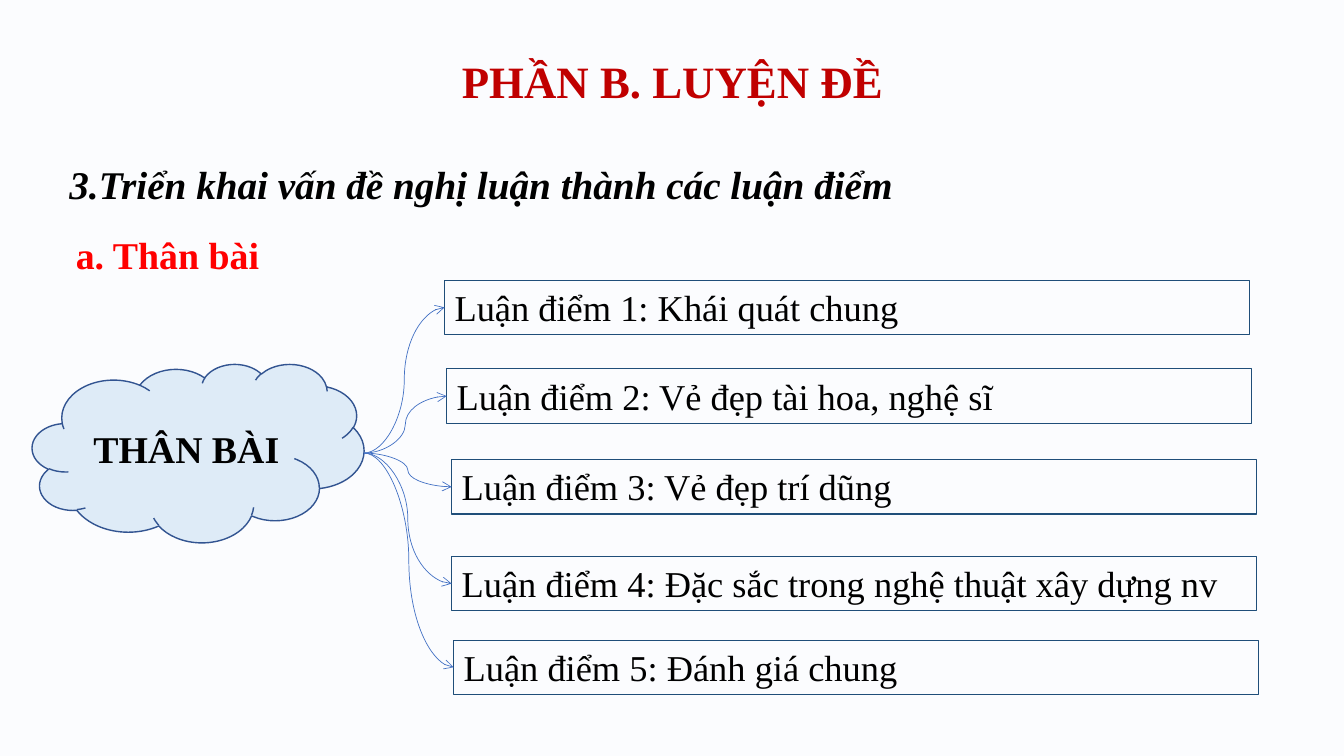
from dataclasses import dataclass

from lxml import etree
from pptx import Presentation
from pptx.dml.color import RGBColor
from pptx.enum.shapes import MSO_CONNECTOR, MSO_SHAPE
from pptx.enum.text import MSO_ANCHOR, MSO_AUTO_SIZE, PP_ALIGN
from pptx.oxml.ns import qn
from pptx.shapes.autoshape import Shape
from pptx.slide import Slide
from pptx.util import Inches, Pt

CENTER, JUSTIFY = PP_ALIGN.CENTER, PP_ALIGN.JUSTIFY
TOP, MIDDLE = MSO_ANCHOR.TOP, MSO_ANCHOR.MIDDLE
FIT_SHAPE = MSO_AUTO_SIZE.SHAPE_TO_FIT_TEXT
CURVE = MSO_CONNECTOR.CURVE
RECTANGLE, CLOUD = MSO_SHAPE.RECTANGLE, MSO_SHAPE.CLOUD
LEFT_SIDE = 1

FONT = "Times New Roman"
COLORS = {
    "background": "FBFCFE",
    "title": "C00000",
    "subheading": "FF0000",
    "text": "000000",
    "point_line": "1F4E79",
    "cloud_fill": "DEEBF7",
    "cloud_line": "325491",
    "arrow": "4472C4",
}


@dataclass
class Label:
    text: str
    size: float
    color: str = "text"
    bold: bool = True
    italic: bool = False
    align: PP_ALIGN = CENTER
    anchor: MSO_ANCHOR = TOP
    spacing: float = 1.0
    wrap: bool = True
    grow: bool = False


@dataclass
class Heading:
    left: float
    top: float
    width: float
    height: float
    label: Label


@dataclass
class Point:
    left: float
    top: float
    text: str


HEADINGS = [
    Heading(0.92, 0.4, 11.5, 0.86,
            Label("PHẦN B. LUYỆN ĐỀ", 32, "title", anchor=MIDDLE, spacing=0.9)),
    Heading(0.59, 1.31, 11.98, 0.72,
            Label("3.Triển khai vấn đề nghị luận thành các luận điểm", 28,
                  italic=True, align=JUSTIFY, spacing=1.5, grow=True)),
    Heading(0.64, 2.25, 2.04, 0.56,
            Label("a. Thân bài", 27, "subheading", wrap=False, grow=True)),
]

POINT_WIDTH, POINT_HEIGHT = 7.98, 0.54
POINTS = [
    Point(4.41, 2.78, "Khái quát chung"),
    Point(4.43, 3.66, "Vẻ đẹp tài hoa, nghệ sĩ"),
    Point(4.48, 4.56, "Vẻ đẹp trí dũng"),
    Point(4.48, 5.52, "Đặc sắc trong nghệ thuật xây dựng nv"),
    Point(4.5, 6.35, "Đánh giá chung"),
]

CLOUD_LEFT, CLOUD_TOP, CLOUD_WIDTH, CLOUD_HEIGHT = 0.32, 3.61, 3.29, 1.77


def color(name: str) -> RGBColor:
    return RGBColor.from_string(COLORS[name])


def write_label(box: Shape, label: Label) -> None:
    frame = box.text_frame
    frame.word_wrap = label.wrap
    frame.vertical_anchor = label.anchor
    if label.grow:
        frame.auto_size = FIT_SHAPE
    para = frame.paragraphs[0]
    para.alignment = label.align
    para.line_spacing = label.spacing
    span = para.add_run()
    span.text = label.text
    span.font.name = FONT
    span.font.size = Pt(label.size)
    span.font.bold = label.bold
    span.font.italic = label.italic
    span.font.color.rgb = color(label.color)


def add_heading(page: Slide, heading: Heading) -> None:
    box = page.shapes.add_textbox(Inches(heading.left), Inches(heading.top),
                                  Inches(heading.width), Inches(heading.height))
    write_label(box, heading.label)


def add_cloud(page: Slide) -> None:
    cloud = page.shapes.add_shape(CLOUD, Inches(CLOUD_LEFT), Inches(CLOUD_TOP),
                                  Inches(CLOUD_WIDTH), Inches(CLOUD_HEIGHT))
    cloud.shadow.inherit = False
    cloud.fill.solid()
    cloud.fill.fore_color.rgb = color("cloud_fill")
    cloud.line.color.rgb = color("cloud_line")
    cloud.line.width = Pt(1)
    write_label(cloud, Label("THÂN BÀI", 27, anchor=MIDDLE))


def add_point(page: Slide, number: int, point: Point) -> Shape:
    box = page.shapes.add_shape(RECTANGLE, Inches(point.left), Inches(point.top),
                                Inches(POINT_WIDTH), Inches(POINT_HEIGHT))
    box.shadow.inherit = False
    box.fill.background()
    box.line.color.rgb = color("point_line")
    box.line.width = Pt(0.75)
    write_label(box, Label(f"Luận điểm {number}: {point.text}", 26, bold=False,
                           align=JUSTIFY, grow=True))
    return box


def add_arrow(page: Slide, target: Shape) -> None:
    arrow = page.shapes.add_connector(
        CURVE, Inches(CLOUD_LEFT + CLOUD_WIDTH), Inches(CLOUD_TOP + CLOUD_HEIGHT / 2),
        target.left, target.top + target.height // 2)
    arrow.end_connect(target, LEFT_SIDE)
    arrow.line.color.rgb = color("arrow")
    arrow.line.width = Pt(0.5)
    # Open arrowhead, no shadow
    etree.SubElement(arrow.line._get_or_add_ln(), qn("a:tailEnd"), type="arrow")
    etree.SubElement(arrow._element.spPr, qn("a:effectLst"))


def main() -> None:
    deck = Presentation()
    deck.slide_width, deck.slide_height = Inches(13.33), Inches(7.5)
    page = deck.slides.add_slide(deck.slide_layouts[6])
    page.background.fill.solid()
    page.background.fill.fore_color.rgb = color("background")

    # Headings
    for heading in HEADINGS:
        add_heading(page, heading)

    # Cloud with an arrow to each point
    add_cloud(page)
    for number, point in enumerate(POINTS, start=1):
        add_arrow(page, add_point(page, number, point))

    deck.save("out.pptx")


if __name__ == "__main__":
    main()
